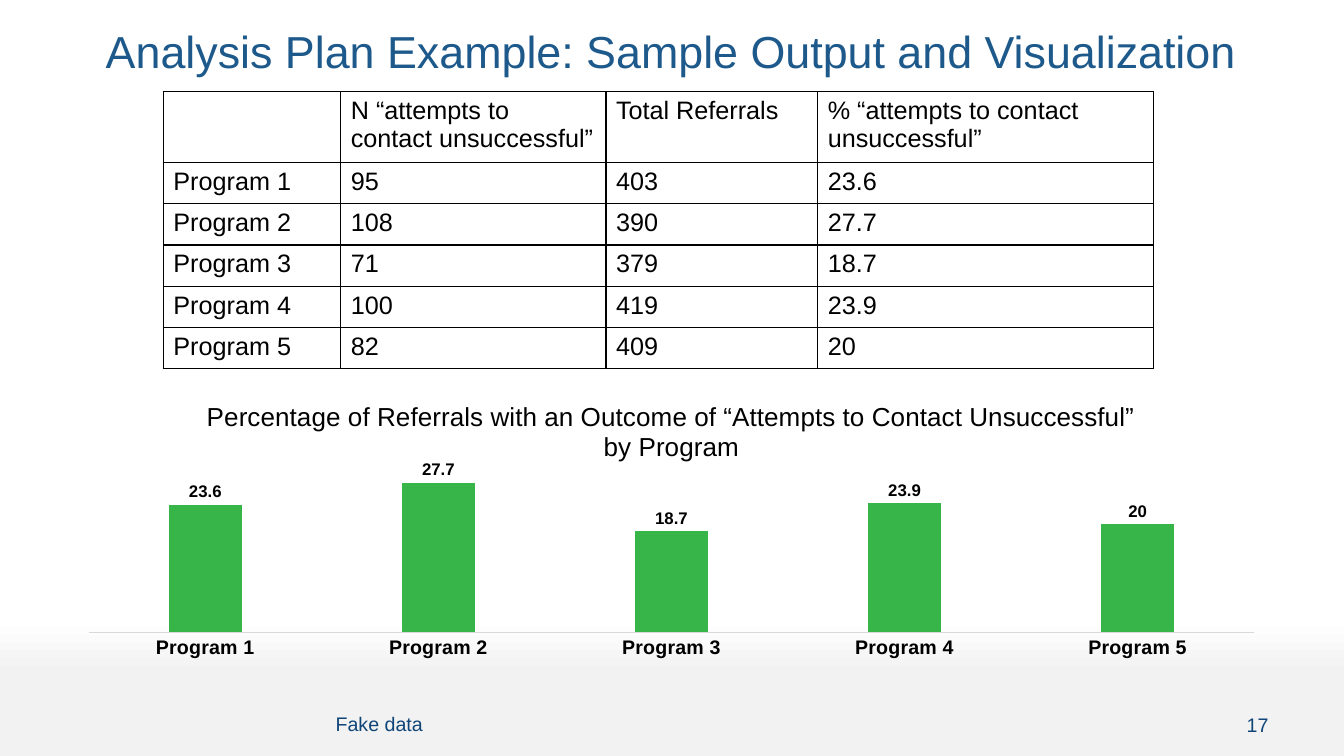
from pptx import Presentation
from pptx.chart.data import CategoryChartData as ChartData
from pptx.dml.color import RGBColor as Color
from pptx.enum.chart import XL_CHART_TYPE as Kind, XL_LABEL_POSITION as Spot, XL_TICK_MARK as Tick
from pptx.enum.text import MSO_ANCHOR as Anchor, PP_ALIGN as Align
from pptx.oxml import parse_xml
from pptx.oxml.ns import nsdecls, qn
from pptx.util import Inches, Pt

HUES = {"title": "1D598B", "foot": "104578", "ink": "000000",
        "bar": "38B549", "axis": "D9D9D9", "top": "FFFFFF", "base": "F2F2F2"}
HEAD = ["", "N “attempts to contact unsuccessful”", "Total Referrals",
        "% “attempts to contact unsuccessful”"]
DATA = [(95, 403, 23.6), (108, 390, 27.7), (71, 379, 18.7), (100, 419, 23.9), (82, 409, 20)]
NAMES = [f"Program {n}" for n in range(1, len(DATA) + 1)]


class Deck:
    """Hold the style and current slide, and draw each kind of element."""

    def __init__(self):
        self.prs = Presentation()
        self.prs.slide_width, self.prs.slide_height = Inches(13.33), Inches(7.5)
        self.slide = self.prs.slides.add_slide(self.prs.slide_layouts[6])

    def hue(self, name):
        return Color.from_string(HUES[name])

    def style(self, font, size, hue="ink", bold=False):
        font.name, font.size, font.bold = "Arial", Pt(size), bold
        font.color.rgb = self.hue(hue)

    def back(self):
        fill = self.slide.background.fill
        fill.gradient()
        fill.gradient_angle = 270
        for stop, (hue, place) in zip(fill.gradient_stops, [("top", 0.82), ("base", 0.89)]):
            stop.color.rgb = self.hue(hue)
            stop.position = place

    def label(self, frame, text, size, hue="ink", align=Align.LEFT):
        para = frame.paragraphs[0]
        para.alignment = align
        run = para.add_run()
        run.text = text
        self.style(run.font, size, hue)
        return para

    def text(self, area, text, size, hue, align=Align.LEFT, anchor=Anchor.MIDDLE):
        frame = self.slide.shapes.add_textbox(*map(Inches, area)).text_frame
        frame.word_wrap = True
        frame.vertical_anchor = anchor
        return self.label(frame, text, size, hue, align)

    def edge(self, cell):
        props = cell._tc.get_or_add_tcPr()
        for spot, side in enumerate(("lnL", "lnR", "lnT", "lnB")):
            props.insert(spot, parse_xml(
                f'<a:{side} {nsdecls("a")} w="12700"><a:solidFill>'
                f'<a:srgbClr val="{HUES["ink"]}"/></a:solidFill></a:{side}>'))

    def table(self, area, rows, widths, heights):
        grid = self.slide.shapes.add_table(len(rows), len(widths), *map(Inches, area)).table
        grid.first_row = grid.horz_banding = False
        for col, width in zip(grid.columns, widths):
            col.width = Inches(width)
        for row, height, texts in zip(grid.rows, heights, rows):
            row.height = Inches(height)
            for cell, text in zip(row.cells, texts):
                cell.fill.background()
                self.edge(cell)
                self.label(cell.text_frame, str(text), 18)

    def chart(self, area, title, names, vals):
        data = ChartData()
        data.categories = names
        data.add_series("Series 1", vals)
        chart = self.slide.shapes.add_chart(
            Kind.COLUMN_CLUSTERED, *map(Inches, area), data).chart
        self.style(chart.font, 10)
        chart.has_legend = False
        self.label(chart.chart_title.text_frame, title, 18.6, align=Align.CENTER)
        cats, axis = chart.category_axis, chart.value_axis
        cats.major_tick_mark = cats.minor_tick_mark = Tick.NONE
        self.style(cats.tick_labels.font, 14, bold=True)
        cats.format.line.color.rgb = self.hue("axis")
        cats.format.line.width = Pt(0.75)
        axis.visible = axis.has_major_gridlines = False
        axis.minimum_scale, axis.maximum_scale = 0, 30
        plot = chart.plots[0]
        plot.gap_width, plot.overlap, plot.vary_by_categories = 219, -27, False
        bars = plot.series[0]
        bars.format.fill.solid()
        bars.format.fill.fore_color.rgb = self.hue("bar")
        tags = bars.data_labels
        tags.show_value, tags.position = True, Spot.OUTSIDE_END
        self.style(tags.font, 12, bold=True)
        self.place(plot._element.getparent(), x=0.02, y=0.31, w=0.96, h=0.58)

    def place(self, zone, **part):
        for old in zone.findall(qn("c:layout")):
            zone.remove(old)
        modes = "".join(f'<c:{key}Mode val="edge"/>' for key in "xy")
        sizes = "".join(f'<c:{key} val="{val}"/>' for key, val in part.items())
        zone.insert(0, parse_xml(
            f'<c:layout {nsdecls("c")}><c:manualLayout><c:layoutTarget val="inner"/>'
            f'{modes}{sizes}</c:manualLayout></c:layout>'))


def main():
    deck = Deck()
    deck.back()
    deck.text((11.33, 6.91, 1.35, 0.55), "17", 14, "foot", Align.RIGHT)
    title = deck.text((0.64, 0.25, 12.04, 0.98),
                      "Analysis Plan Example: Sample Output and Visualization",
                      32, "title", Align.CENTER, Anchor.TOP)
    title.line_spacing = 0.9
    rows = [HEAD] + [(name, *vals) for name, vals in zip(NAMES, DATA)]
    deck.table((1.62, 0.91, 9.82, 2.73), rows, (1.76, 2.63, 2.1, 3.33),
               [0.66] + [0.41] * len(DATA))
    deck.chart((0.64, 3.81, 12.04, 2.77),
               "Percentage of Referrals with an Outcome of “Attempts to Contact Unsuccessful” by Program",
               NAMES, [vals[-1] for vals in DATA])
    deck.text((3.23, 6.91, 8.1, 0.54), "Fake data", 14, "foot")
    deck.prs.save("out.pptx")


if __name__ == "__main__":
    main()
